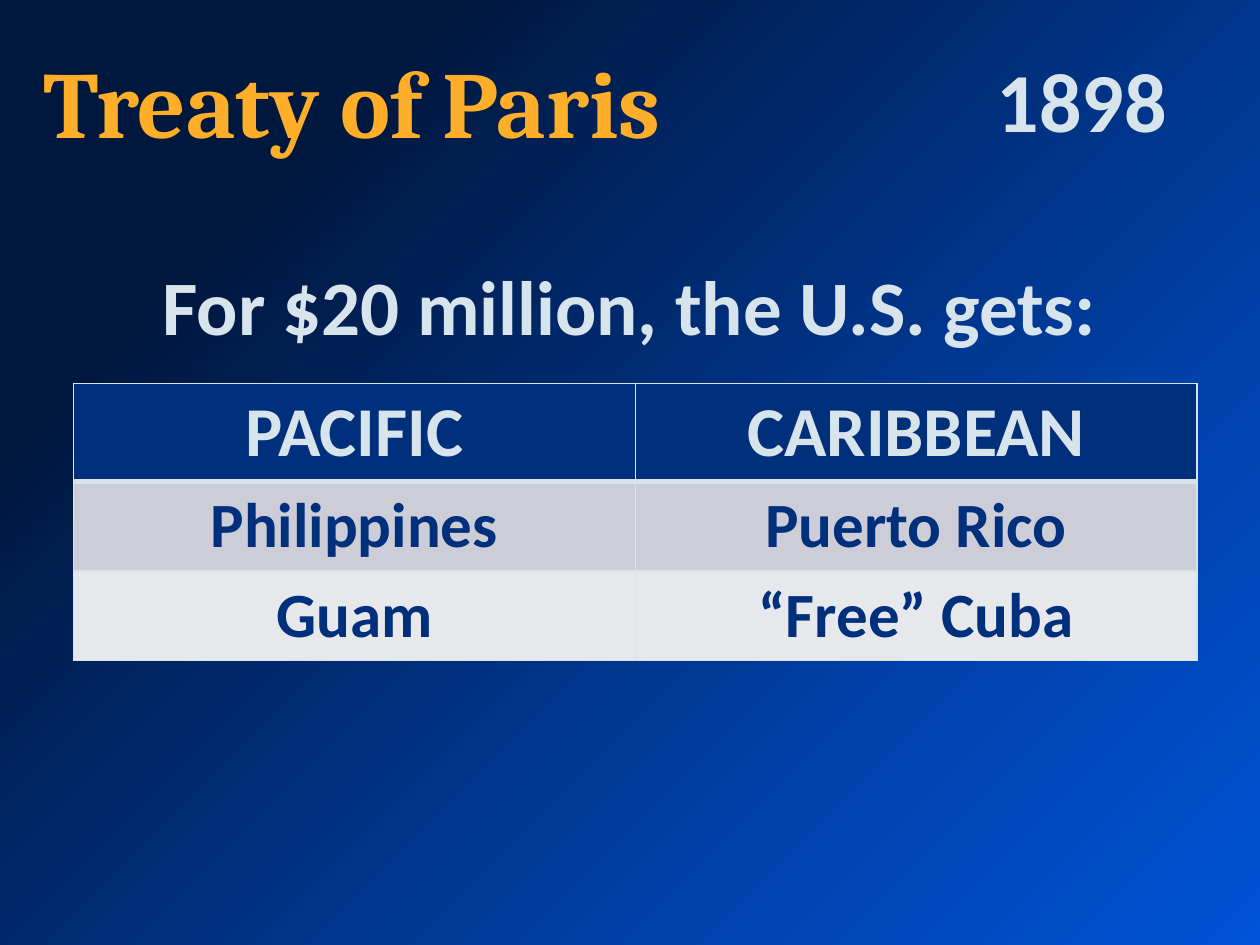
from copy import deepcopy

from lxml.etree import SubElement
from pptx import Presentation
from pptx.dml.color import RGBColor
from pptx.enum.text import MSO_ANCHOR, MSO_AUTO_SIZE, PP_ALIGN
from pptx.oxml.ns import qn
from pptx.util import Pt

NAVY = RGBColor(0x00, 0x2F, 0x7B)
MIST = RGBColor(0xD7, 0xE4, 0xEC)
GOLD = RGBColor(0xFF, 0xAE, 0x29)
BAND_DARK = RGBColor(0xCC, 0xCD, 0xD7)
BAND_LIGHT = RGBColor(0xE7, 0xE8, 0xEC)
BACKDROP = [
    (0.20, RGBColor(0x00, 0x17, 0x3E)),
    (0.73, RGBColor(0x00, 0x42, 0xAC)),
    (1.00, RGBColor(0x00, 0x52, 0xD6)),
]


def write(frame, text, size, color=MIST, font="Calibri", align=PP_ALIGN.LEFT):
    paragraph = frame.paragraphs[0]
    paragraph.alignment = align
    run = paragraph.add_run()
    run.text = text
    run.font.name = font
    run.font.size = Pt(size)
    run.font.bold = True
    run.font.color.rgb = color


class TreatySlide:
    """Hold the slide and its style, and add each kind of element."""

    def __init__(self, deck):
        self.slide = deck.slides.add_slide(deck.slide_layouts[6])

    def backdrop(self, stops):
        fill = self.slide.background.fill
        fill.gradient()
        fill.gradient_angle = 315
        stop_list = self.slide.element.find(".//" + qn("a:gsLst"))
        while len(stop_list) < len(stops):
            stop_list.append(deepcopy(stop_list[0]))
        for stop, (position, color) in zip(fill.gradient_stops, stops):
            stop.position = position
            stop.color.rgb = color

    def text(self, text, left, top, width, height, wrap=True,
             grow=True, anchor=MSO_ANCHOR.TOP, **style):
        box = self.slide.shapes.add_textbox(Pt(left), Pt(top), Pt(width), Pt(height))
        frame = box.text_frame
        frame.word_wrap = wrap
        frame.auto_size = MSO_AUTO_SIZE.SHAPE_TO_FIT_TEXT if grow else MSO_AUTO_SIZE.NONE
        frame.vertical_anchor = anchor
        write(frame, text, **style)

    def border(self, cell, **widths):
        properties = cell._tc.get_or_add_tcPr()
        for side in "LRTB":
            line = SubElement(properties, qn(f"a:ln{side}"), w=str(Pt(widths.get(side, 1))))
            SubElement(SubElement(line, qn("a:solidFill")), qn("a:srgbClr"), val=str(MIST))

    def table(self, rows, left, top, width, heights, looks):
        size = len(rows), len(rows[0])
        grid = self.slide.shapes.add_table(
            *size, Pt(left), Pt(top), Pt(width), Pt(sum(heights))).table
        rules = [{"B": 3}, {"T": 3}, {}]
        for r, (words, height, look, rule) in enumerate(zip(rows, heights, looks, rules)):
            fill, color, font_size = look
            grid.rows[r].height = Pt(height)
            for c, word in enumerate(words):
                cell = grid.cell(r, c)
                self.border(cell, **rule)
                cell.fill.solid()
                cell.fill.fore_color.rgb = fill
                write(cell.text_frame, word, font_size, color, align=PP_ALIGN.CENTER)


def main():
    deck = Presentation()
    deck.slide_width, deck.slide_height = Pt(720), Pt(540)
    treaty = TreatySlide(deck)
    treaty.backdrop(BACKDROP)
    treaty.text("Treaty of Paris", 18, 12.24, 455.76, 90, grow=False,
                anchor=MSO_ANCHOR.MIDDLE, size=54, color=GOLD, font="Cambria")
    treaty.table(
        [("PACIFIC", "CARIBBEAN"), ("Philippines", "Puerto Rico"), ("Guam", "“Free” Cuba")],
        42, 219, 642, [55, 51, 51],
        [(NAVY, MIST, 40), (BAND_DARK, NAVY, 36), (BAND_LIGHT, NAVY, 36)])
    treaty.text("For $20 million, the U.S. gets:", 0, 144, 720, 60.5,
                size=44, align=PP_ALIGN.CENTER)
    treaty.text("1898", 562.5, 24, 121.5, 65.5, wrap=False, size=48)
    deck.save("out.pptx")


if __name__ == "__main__":
    main()
